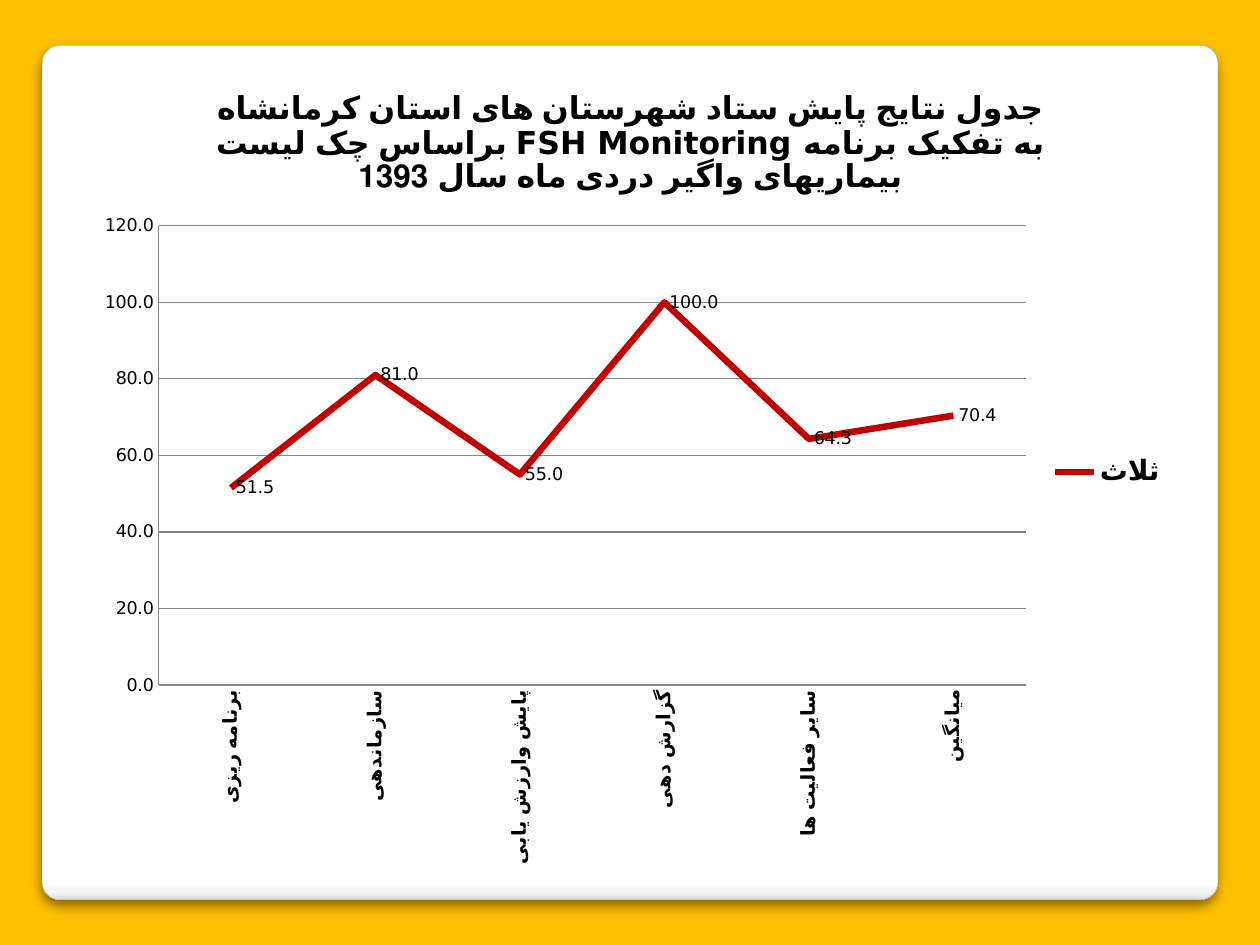
from dataclasses import dataclass

from lxml import etree
from pptx import Presentation
from pptx.chart import data as cd
from pptx.dml.color import RGBColor
from pptx.enum import chart as ec, shapes as es
from pptx.oxml import parse_xml
from pptx.oxml.ns import nsdecls, qn
from pptx.util import Pt


@dataclass(frozen=True)
class Theme:
    page: str = "FFC000"
    edge: str = "A4A4A4"
    ink: str = "000000"
    grid: str = "868686"
    trend: str = "C00000"
    font: str = "DejaVu Sans"
    title: float = 18
    legend: float = 16
    cats: float = 11
    base: float = 10


@dataclass(frozen=True)
class Box:
    x: float
    y: float
    w: float
    h: float

    def pts(self) -> tuple:
        return Pt(self.x), Pt(self.y), Pt(self.w), Pt(self.h)


@dataclass(frozen=True)
class Score:
    name: str
    value: float


THEME = Theme()
CARD = Box(24, 25.9, 672, 488.2)
CHART = Box(46.8, 35.3, 627.1, 468.7)
PLOT = Box(0.07, 0.2, 0.79, 0.56)  # shares of the chart area
FADE = [(0, "FFFFFF"), (98, "FFFFFF"), (99, "F7F7F7"), (100, "DADADA")]
TITLE = ("جدول نتایج پایش ستاد شهرستان های استان کرمانشاه براساس چک لیست "
         "FSH Monitoring به تفکیک برنامه بیماریهای واگیر دردی ماه سال 1393")
COUNTY = "ثلاث"
SCORES = [
    Score("برنامه ریزی", 51.5),
    Score("سازماندهی", 81),
    Score("پایش وارزش یابی", 55),
    Score("گزارش دهی", 100),
    Score("سایر فعالیت ها", 64.3),
    Score("میانگین", 70.4),
]


def rgb(code: str) -> RGBColor:
    return RGBColor.from_string(code)


def style(font, size: float, bold: bool = False) -> None:
    font.name, font.size, font.bold = THEME.font, Pt(size), bold
    font.color.rgb = rgb(THEME.ink)


def stroke(line, color: str, width: float) -> None:
    line.color.rgb = rgb(color)
    line.width = Pt(width)


def draw_card(slide, box: Box) -> None:
    card = slide.shapes.add_shape(es.MSO_SHAPE.ROUNDED_RECTANGLE, *box.pts())
    card.adjustments[0] = 0.021
    stroke(card.line, THEME.edge, 0.16)
    card.shadow.inherit = False
    props = card._element.spPr
    stops = "".join(f'<a:gs pos="{pos * 1000}"><a:srgbClr val="{code}"/></a:gs>'
                    for pos, code in FADE)
    fill = parse_xml(f'<a:gradFill {nsdecls("a")}><a:gsLst>{stops}</a:gsLst>'
                     '<a:lin ang="5400000" scaled="0"/></a:gradFill>')
    props.find(qn("a:ln")).addprevious(fill)
    props.find(qn("a:effectLst")).append(parse_xml(
        f'<a:outerShdw {nsdecls("a")} blurRad="{Pt(6)}" dist="{Pt(4)}" '
        f'dir="5400000" algn="t" rotWithShape="0"><a:srgbClr val="{THEME.ink}">'
        '<a:alpha val="45000"/></a:srgbClr></a:outerShdw>'))


def place_plot(chart, box: Box) -> None:
    """Fix the inner plot area at shares of the chart area."""
    area = chart._chartSpace.chart.plotArea
    for old in area.findall(qn("c:layout")):
        area.remove(old)
    layout = etree.Element(qn("c:layout"))
    manual = etree.SubElement(layout, qn("c:manualLayout"))
    rules = [("layoutTarget", "inner"), ("xMode", "edge"), ("yMode", "edge"),
             ("x", box.x), ("y", box.y), ("w", box.w), ("h", box.h)]
    for tag, val in rules:
        etree.SubElement(manual, qn(f"c:{tag}"), val=str(val))
    area.insert(0, layout)


def style_axes(chart) -> None:
    cats, vals = chart.category_axis, chart.value_axis
    for axis in (cats, vals):
        axis.major_tick_mark = axis.minor_tick_mark = ec.XL_TICK_MARK.NONE
        stroke(axis.format.line, THEME.grid, 0.75)
    style(cats.tick_labels.font, THEME.cats, True)
    body = cats._element.find(qn("c:txPr")).find(qn("a:bodyPr"))
    body.set("rot", "-5400000")
    body.set("vert", "horz")
    style(vals.tick_labels.font, THEME.base)
    vals.minimum_scale, vals.maximum_scale, vals.major_unit = 0, 120, 20
    vals.tick_labels.number_format = "0.0"
    vals.tick_labels.number_format_is_linked = False
    vals.has_major_gridlines = True
    stroke(vals.major_gridlines.format.line, THEME.grid, 0.75)


def style_trend(chart) -> None:
    trend = chart.plots[0].series[0]
    trend.smooth = False
    trend.marker.style = ec.XL_MARKER_STYLE.NONE
    stroke(trend.format.line, THEME.trend, 3.75)
    labels = trend.data_labels
    labels.show_value = True
    labels.number_format, labels.number_format_is_linked = "0.0", False
    labels.position = ec.XL_LABEL_POSITION.RIGHT
    style(labels.font, THEME.base)


def draw_chart(slide, box: Box) -> None:
    data = cd.CategoryChartData(number_format="0.0")
    data.categories = [score.name for score in SCORES]
    data.add_series(COUNTY, [score.value for score in SCORES])
    chart = slide.shapes.add_chart(ec.XL_CHART_TYPE.LINE, *box.pts(), data).chart
    style(chart.font, THEME.base)
    chart.plots[0].vary_by_categories = False
    chart.has_title = True
    frame = chart.chart_title.text_frame
    frame.text = TITLE
    style(frame.paragraphs[0].runs[0].font, THEME.title, True)
    chart.chart_title.include_in_layout = False
    chart.has_legend = True
    chart.legend.position = ec.XL_LEGEND_POSITION.RIGHT
    chart.legend.include_in_layout = False
    style(chart.legend.font, THEME.legend, True)
    style_axes(chart)
    style_trend(chart)
    place_plot(chart, PLOT)


def main() -> None:
    deck = Presentation()
    deck.slide_width, deck.slide_height = Pt(720), Pt(540)
    slide = deck.slides.add_slide(deck.slide_layouts[6])
    back = slide.background.fill
    back.solid()
    back.fore_color.rgb = rgb(THEME.page)
    draw_card(slide, CARD)
    draw_chart(slide, CHART)
    deck.save("out.pptx")


if __name__ == "__main__":
    main()
